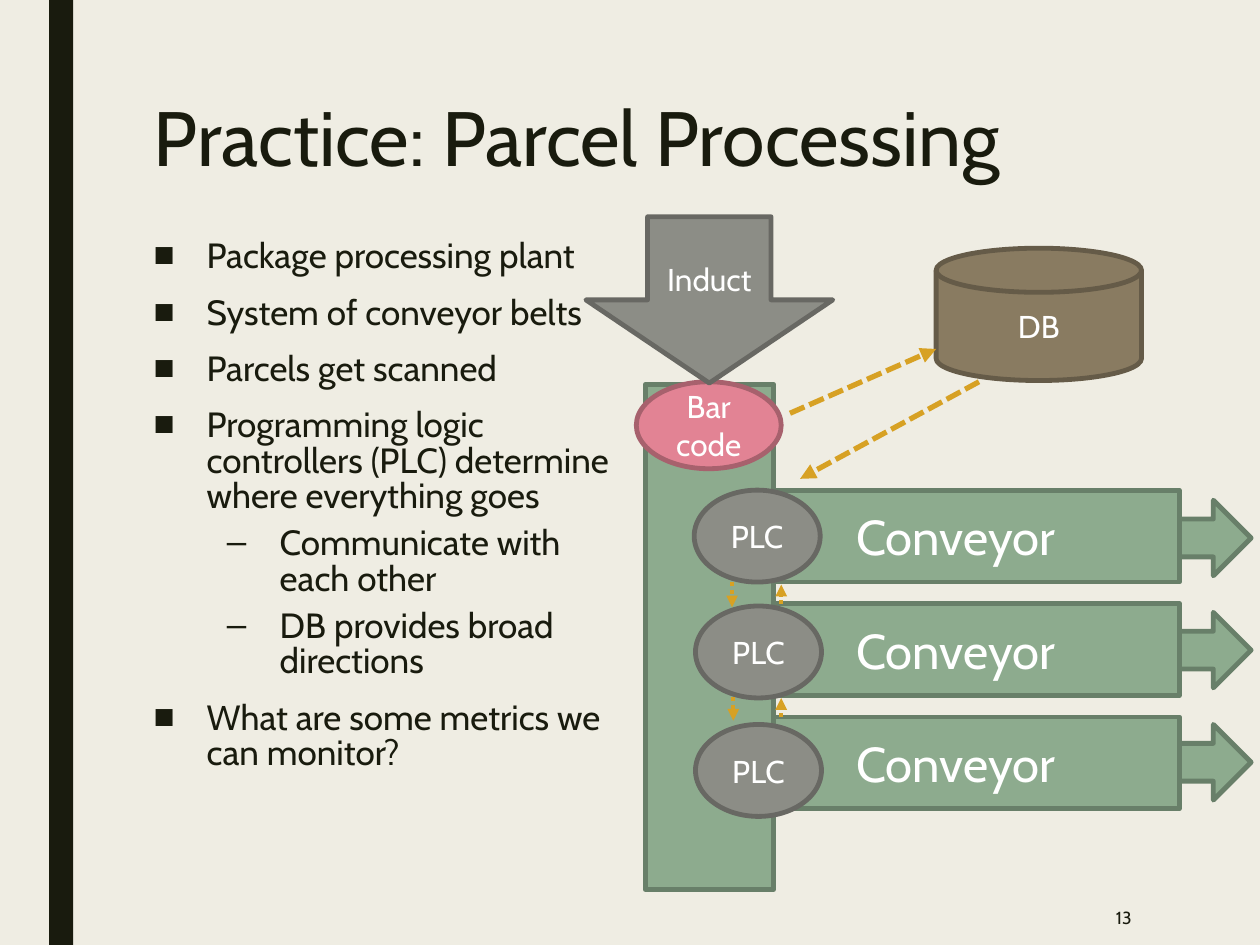
from lxml.etree import SubElement
from pptx import Presentation
from pptx.dml.color import RGBColor
from pptx.enum.dml import MSO_LINE
from pptx.enum.shapes import MSO_CONNECTOR, MSO_SHAPE
from pptx.enum.text import MSO_ANCHOR, MSO_AUTO_SIZE, PP_ALIGN
from pptx.oxml.ns import qn
from pptx.util import Inches, Pt

COLORS = {
    "background": "EFEDE3", "ink": "191B0E", "white": "FFFFFF",
    "green": "8DAB8E", "green edge": "687F69",
    "gray": "8C8D86", "gray edge": "686863",
    "pink": "E28394", "pink edge": "A7616D",
    "brown": "897B61", "brown edge": "655B48", "gold": "D7A124",
}
FONT = "Cabin"
TITLE = "Practice: Parcel Processing"
BULLETS = [
    (0, "Package processing plant"),
    (0, "System of conveyor belts"),
    (0, "Parcels get scanned"),
    (0, "Programming logic controllers (PLC) determine where everything goes"),
    (1, "Communicate with each other"),
    (1, "DB provides broad directions"),
    (0, "What are some metrics we can monitor?"),
]
LEVELS = [
    {"bullet": "■", "margin": 0.42, "before": 10},
    {"bullet": "–", "margin": 1, "before": 5},
]
LANES = 3
PLC_PLACES = [(5.51, 3.89), (5.52, 4.81), (5.52, 5.75)]
STATIONS = [
    (MSO_SHAPE.RECTANGLE, (5.12, 3.05, 1.02, 4.01), "green", "", 18),
    (MSO_SHAPE.OVAL, (5.05, 3.03, 1.15, 0.69), "pink", "Bar code", 18),
    (MSO_SHAPE.DOWN_ARROW, (4.65, 1.72, 1.96, 1.32), "gray", "Induct", 18),
    (MSO_SHAPE.FLOWCHART_MAGNETIC_DISK, (7.43, 1.97, 1.63, 1.05), "brown", "DB", 18),
]
DATABASE_LINKS = [((7.77, 3.03), (6.35, 3.8)), ((6.27, 3.28), (7.43, 2.77))]
PLC_LINKS = [
    ((5.81, 4.62), (5.81, 4.82)), ((6.2, 4.79), (6.2, 4.64)),
    ((5.82, 5.53), (5.82, 5.72)), ((6.2, 5.69), (6.2, 5.54)),
]


def color(name):
    return RGBColor.from_string(COLORS[name])


def apply(target, values):
    for name, value in values.items():
        setattr(target, name, value)


def write(para, text, size, ink="ink", **layout):
    apply(para, layout)
    span = para.add_run()
    span.text = text
    apply(span.font, {"name": FONT, "size": Pt(size)})
    span.font.color.rgb = color(ink)


def place(box, spot):
    apply(box, dict(zip(("left", "top", "width", "height"), map(Inches, spot))))


def set_frame(box, anchor):
    apply(box.text_frame, {"word_wrap": True, "auto_size": MSO_AUTO_SIZE.NONE,
                           "vertical_anchor": anchor})
    return box.text_frame


def add_block(page, kind, spot, fill, text="", size=18):
    block = page.shapes.add_shape(kind, *map(Inches, spot))
    block.shadow.inherit = False
    block.fill.solid()
    block.fill.fore_color.rgb = color(fill)
    block.line.color.rgb = color(f"{fill} edge")
    block.line.width = Pt(2.75)
    if text:
        frame = set_frame(block, MSO_ANCHOR.MIDDLE)
        write(frame.paragraphs[0], text, size, "white", alignment=PP_ALIGN.CENTER)


def add_link(page, start, end, width, dash):
    link = page.shapes.add_connector(MSO_CONNECTOR.STRAIGHT, *map(Inches, start + end))
    link.line.color.rgb = color("gold")
    apply(link.line, {"width": Pt(width), "dash_style": dash})
    SubElement(link.line._get_or_add_ln(), qn("a:tailEnd"), type="triangle")
    SubElement(link._element.spPr, qn("a:effectLst"))


def add_bullet(para, level, text):
    style = LEVELS[level]
    write(para, text, 20, level=level, line_spacing=0.84,
          space_before=Pt(style["before"]), space_after=Pt(2))
    properties = para._p.get_or_add_pPr()
    properties.set("marL", str(Inches(style["margin"])))
    properties.set("indent", str(-Inches(0.42)))
    SubElement(properties, qn("a:buFont"), typeface="Arial")
    SubElement(properties, qn("a:buChar"), char=style["bullet"])


def add_texts(page):
    title, body = page.placeholders
    place(title, (1.12, 0.75, 7.88, 1.11))
    frame = set_frame(title, MSO_ANCHOR.TOP)
    write(frame.paragraphs[0], TITLE, 44, alignment=PP_ALIGN.LEFT, line_spacing=0.89)
    place(body, (1.12, 1.86, 4.01, 4.56))
    frame = set_frame(body, MSO_ANCHOR.TOP)
    for index, (level, text) in enumerate(BULLETS):
        para = frame.add_paragraph() if index else frame.paragraphs[0]
        add_bullet(para, level, text)
    number = page.shapes.add_textbox(*map(Inches, (7.77, 7.06, 1.31, 0.44)))
    frame = set_frame(number, MSO_ANCHOR.MIDDLE)
    write(frame.paragraphs[0], "13", 10, alignment=PP_ALIGN.RIGHT)


def add_plant(page):
    for lane in range(LANES):
        add_block(page, MSO_SHAPE.RIGHT_ARROW, (8.93, 3.97 + 0.89 * lane, 1, 0.6), "green")
    for lane in range(LANES):
        add_block(page, MSO_SHAPE.RECTANGLE, (5.81, 3.89 + 0.9 * lane, 3.55, 0.73),
                  "green", "Conveyor", 28)
    for station in STATIONS:
        add_block(page, *station)
    for spot in PLC_PLACES:
        add_block(page, MSO_SHAPE.OVAL, spot + (1, 0.73), "gray", "PLC")
    for start, end in DATABASE_LINKS:
        add_link(page, start, end, 3, MSO_LINE.SQUARE_DOT)
    for start, end in PLC_LINKS:
        add_link(page, start, end, 2.25, MSO_LINE.ROUND_DOT)


def main():
    deck = Presentation()
    apply(deck, {"slide_width": Inches(10), "slide_height": Inches(7.5)})
    page = deck.slides.add_slide(deck.slide_layouts[1])
    page.background.fill.solid()
    page.background.fill.fore_color.rgb = color("background")
    stripe = page.shapes.add_shape(MSO_SHAPE.RECTANGLE, *map(Inches, (0.39, 0, 0.19, 7.5)))
    stripe.shadow.inherit = False
    stripe.fill.solid()
    stripe.fill.fore_color.rgb = color("ink")
    stripe.line.fill.background()
    add_texts(page)
    add_plant(page)
    deck.save("out.pptx")


if __name__ == "__main__":
    main()
